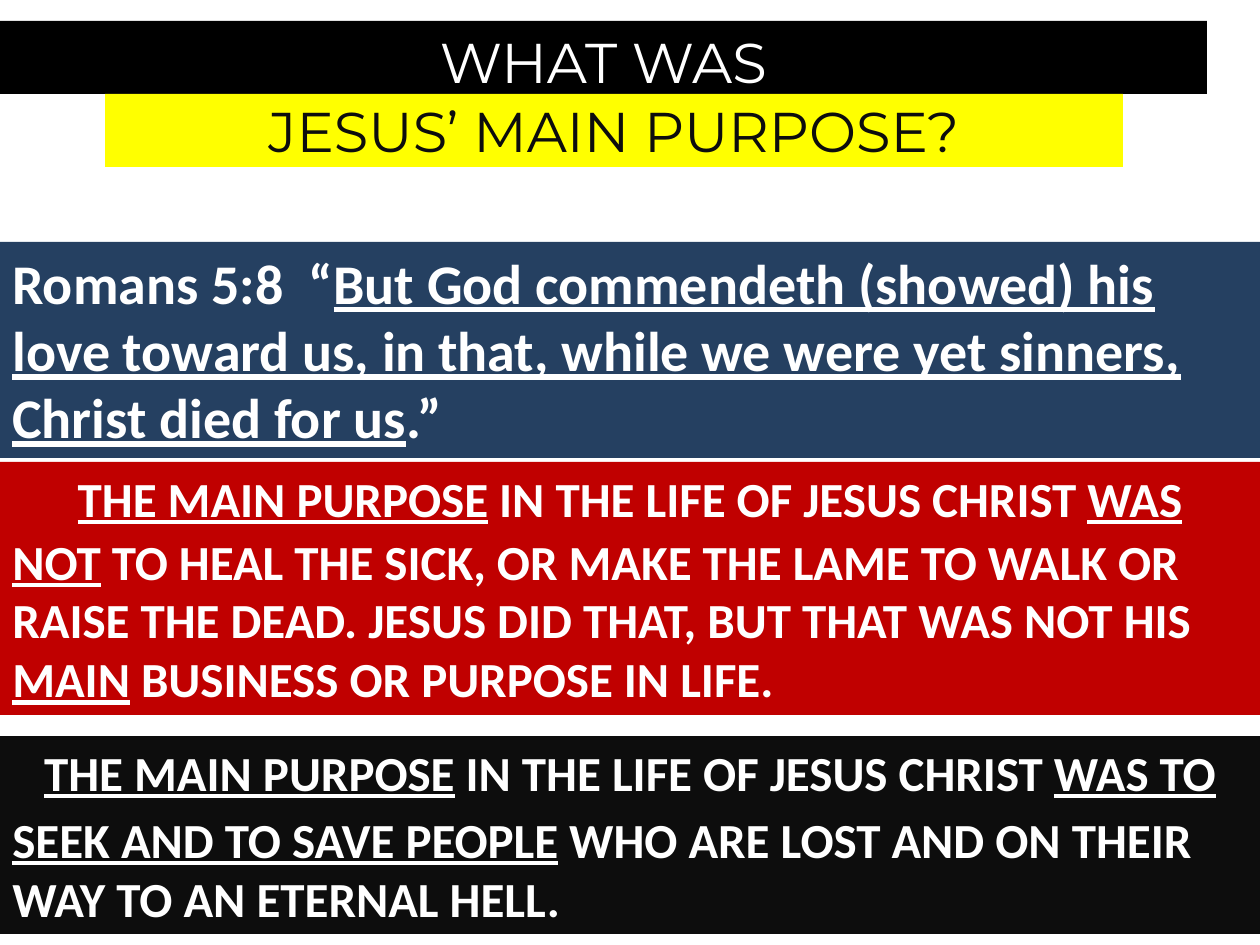
from dataclasses import dataclass

from pptx import Presentation
from pptx.dml.color import RGBColor
from pptx.enum.shapes import MSO_SHAPE
from pptx.enum.text import MSO_ANCHOR, MSO_AUTO_SIZE, PP_ALIGN
from pptx.util import Emu, Pt

PX = 914400 // 126
WIDTH, HEIGHT = 1260, 945


@dataclass
class Band:
    box: tuple[int, int, int, int]  # left, top, width, height in px
    fill: str
    runs: list[tuple[str, bool]]  # text, underlined
    size: int = 28
    font: str = "Calibri"
    color: str = "FFFFFF"
    bold: bool = True
    align: PP_ALIGN = PP_ALIGN.LEFT
    anchor: MSO_ANCHOR = MSO_ANCHOR.TOP
    fit: MSO_AUTO_SIZE = MSO_AUTO_SIZE.SHAPE_TO_FIT_TEXT


HEADING = {"size": 32, "font": "Montserrat", "bold": False,
           "align": PP_ALIGN.CENTER, "fit": MSO_AUTO_SIZE.NONE}
RED, BLACK = "C00000", "0D0D0D"

TITLE = Band((0, 21, 1207, 73), "000000", [("WHAT WAS", False)], **HEADING)

BANDS = [
    # Scripture verse
    Band((0, 242, WIDTH, 216), "254061", [
        ("Romans 5:8  “", False),
        ("But God commendeth (showed) his love toward us, in that, "
         "while we were yet sinners, Christ died for us", True),
        (".”", False)], size=32),
    # What the purpose was not
    Band((0, 462, WIDTH, 72), RED, [
        ("THE MAIN PURPOSE", True),
        (" IN THE LIFE OF JESUS CHRIST ", False),
        ("WAS", True)], align=PP_ALIGN.CENTER),
    Band((0, 525, WIDTH, 190), RED, [
        ("NOT", True),
        (" TO HEAL THE SICK, OR MAKE THE LAME TO WALK OR RAISE THE DEAD. "
         "JESUS DID THAT, BUT THAT WAS NOT HIS ", False),
        ("MAIN", True),
        (" BUSINESS OR PURPOSE IN LIFE.", False)]),
    # What the purpose was
    Band((0, 803, WIDTH, 131), BLACK, [
        ("SEEK AND TO SAVE PEOPLE", True),
        (" WHO ARE LOST AND ON THEIR WAY TO AN ETERNAL HELL.", False)]),
    Band((0, 736, WIDTH, 72), BLACK, [
        ("THE MAIN PURPOSE", True),
        (" IN THE LIFE OF JESUS CHRIST ", False),
        ("WAS TO", True)], align=PP_ALIGN.CENTER),
    # Second heading line
    Band((105, 94, 1018, 73), "FFFF00", [("JESUS’ MAIN PURPOSE?", False)],
         color=BLACK, anchor=MSO_ANCHOR.MIDDLE, **HEADING),
]


def rgb(value: str) -> RGBColor:
    return RGBColor.from_string(value)


def format_band(sp, band: Band) -> None:
    """Place the shape, fill it and write its runs."""
    sp.left, sp.top, sp.width, sp.height = (Emu(v * PX) for v in band.box)
    sp.fill.solid()
    sp.fill.fore_color.rgb = rgb(band.fill)
    sp.line.fill.background()

    tf = sp.text_frame
    frame = {"word_wrap": True, "auto_size": band.fit,
             "vertical_anchor": band.anchor}
    for name, value in frame.items():
        setattr(tf, name, value)

    p = tf.paragraphs[0]
    p.alignment = band.align
    for text, underline in band.runs:
        r = p.add_run()
        r.text = text
        font = {"name": band.font, "size": Pt(band.size),
                "bold": band.bold, "underline": underline}
        for name, value in font.items():
            setattr(r.font, name, value)
        r.font.color.rgb = rgb(band.color)


def add_band(s, band: Band) -> None:
    sp = s.shapes.add_shape(MSO_SHAPE.RECTANGLE, *(Emu(v * PX) for v in band.box))
    sp.shadow.inherit = False
    format_band(sp, band)


def main() -> None:
    prs = Presentation()
    prs.slide_width, prs.slide_height = Emu(WIDTH * PX), Emu(HEIGHT * PX)
    s = prs.slides.add_slide(prs.slide_layouts[5])
    format_band(s.shapes.title, TITLE)
    for band in BANDS:
        add_band(s, band)
    prs.save("out.pptx")


if __name__ == "__main__":
    main()
